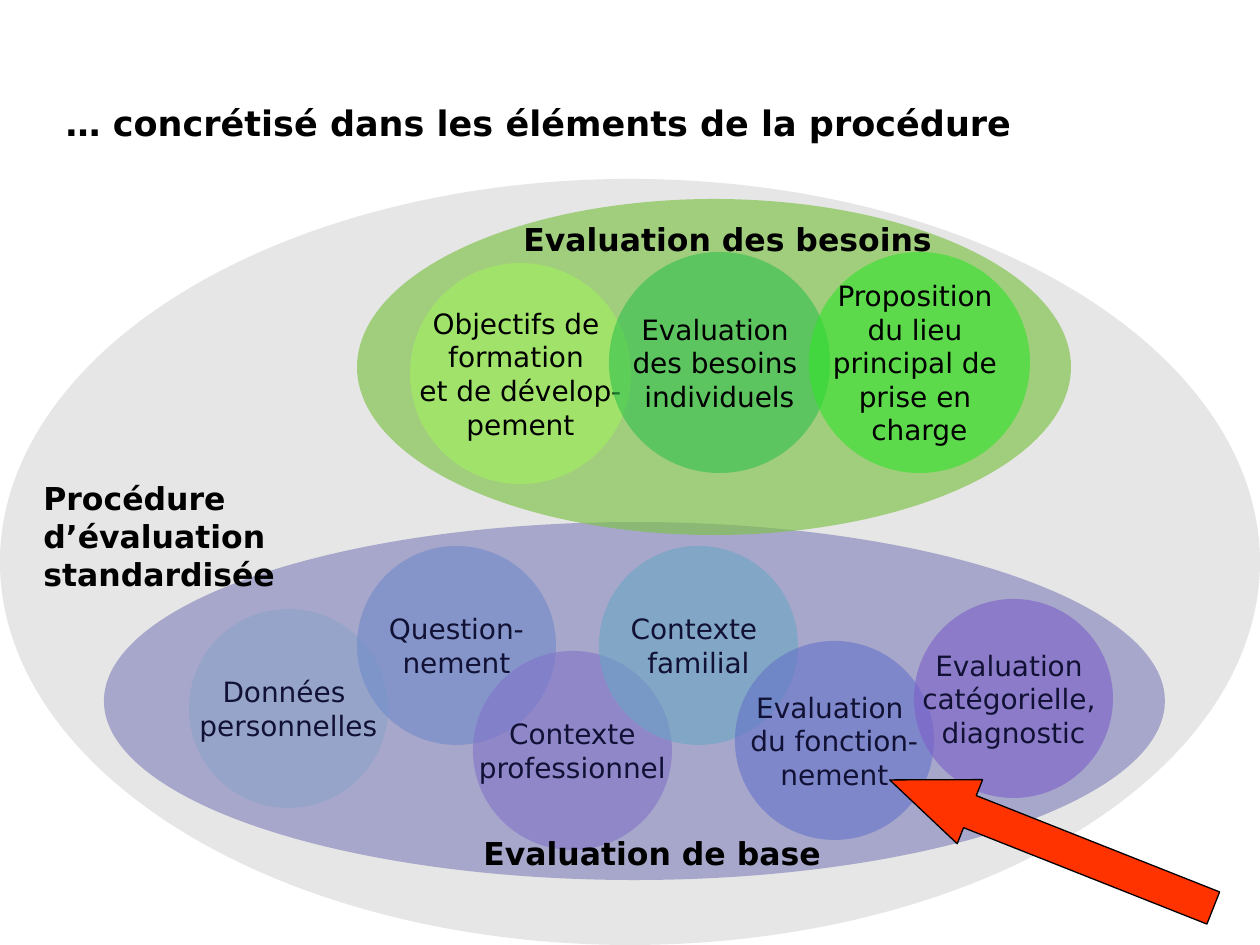
import pptx
import pptx.util
import pptx.dml.color
import pptx.enum.shapes
import pptx.enum.text
import pptx.oxml.ns
import lxml.etree

RGBColor = pptx.dml.color.RGBColor
MSO_SHAPE = pptx.enum.shapes.MSO_SHAPE
ANCHOR = pptx.enum.text.MSO_ANCHOR
ALIGN = pptx.enum.text.PP_ALIGN

PX = 914400 // 126
FONT = "DejaVu Sans"
BLACK = RGBColor(0x00, 0x00, 0x00)
GREY = RGBColor(0xE6, 0xE6, 0xE6)
NAVY = RGBColor(0x33, 0x33, 0x99)
GREEN = RGBColor(0x7E, 0xC2, 0x47)
RED = RGBColor(0xFF, 0x33, 0x00)
PALE_BLUE = RGBColor(0xBB, 0xE0, 0xE3)
SKY = RGBColor(0x8F, 0xBA, 0xE3)
LILAC = RGBColor(0xAB, 0x95, 0xE3)
TURQUOISE = RGBColor(0x87, 0xE3, 0xD9)
BLUE = RGBColor(0x7E, 0x95, 0xE3)
VIOLET = RGBColor(0xA3, 0x77, 0xE3)
LIME = RGBColor(0xA2, 0xF1, 0x5E)
EMERALD = RGBColor(0x30, 0xC0, 0x4B)
BRIGHT_GREEN = RGBColor(0x31, 0xE2, 0x2B)

prs = pptx.Presentation()
prs.slide_width = 1260 * PX
prs.slide_height = 945 * PX
s = prs.slides.add_slide(prs.slide_layouts[5])


def write(sp, text, size=18, bold=False, align=ALIGN.LEFT, anchor=ANCHOR.TOP, wrap=False):
    """Fill a shape with text; \\n starts a paragraph, \\v breaks a line."""
    tf = sp.text_frame
    tf.text = text
    tf.word_wrap = wrap
    tf.auto_size = pptx.enum.text.MSO_AUTO_SIZE.NONE
    tf.vertical_anchor = anchor
    for p in tf.paragraphs:
        p.alignment = align
        for r in p.runs:
            r.font.name = FONT
            r.font.size = pptx.util.Pt(size)
            r.font.bold = bold
            r.font.color.rgb = BLACK


def add_ellipse(x, y, w, h, color, opacity=100):
    sp = s.shapes.add_shape(MSO_SHAPE.OVAL, x * PX, y * PX, w * PX, h * PX)
    sp.shadow.inherit = False
    sp.line.fill.background()
    sp.fill.solid()
    sp.fill.fore_color.rgb = color
    if opacity < 100:
        clr = sp.fill._xPr.find(".//" + pptx.oxml.ns.qn("a:srgbClr"))
        lxml.etree.SubElement(clr, pptx.oxml.ns.qn("a:alpha"), val=str(opacity * 1000))
    return sp


# Whole procedure
add_ellipse(0, 179, 1260, 766, GREY)

title = s.shapes.title
title.left, title.top, title.width, title.height = 53 * PX, 95 * PX, 1165 * PX, 55 * PX
write(title, "… concrétisé dans les éléments de la procédure", size=20, bold=True,
      anchor=ANCHOR.MIDDLE, wrap=True)

base_circles = [
    (189, 609, PALE_BLUE, "Données \vpersonnelles"),
    (357, 546, SKY, "Question-\vnement"),
    (473, 651, LILAC, "Contexte\vprofessionnel"),
    (599, 546, TURQUOISE, "Contexte \vfamilial"),
    (735, 641, BLUE, "Evaluation \ndu fonction-\vnement"),
    (914, 599, VIOLET, "Evaluation \vcatégorielle, \ndiagnostic"),
]
needs_circles = [
    (410, 263, LIME, "Objectifs de \vformation \vet de dévelop-\vpement"),
    (609, 252, EMERALD, "Evaluation \vdes besoins \vindividuels"),
    (809, 252, BRIGHT_GREEN, "Proposition \vdu lieu \vprincipal de \vprise en \vcharge"),
]
base_area = (104, 522, 1061, 358, NAVY, 35)
needs_area = (357, 199, 714, 336, GREEN, 66)

# The base area lies over its circles, the needs area under its own
ellipses = [(x, y, 199, 199, color, 60, text) for x, y, color, text in base_circles]
ellipses += [(*base_area, ""), (*needs_area, "")]
ellipses += [(x, y, 221, 221, color, 60, text) for x, y, color, text in needs_circles]
for *geometry, text in ellipses:
    sp = add_ellipse(*geometry)
    if text:
        write(sp, text, size=16, align=ALIGN.CENTER, anchor=ANCHOR.MIDDLE)

headings = [
    (471, 828, 363, 50, "Evaluation de base"),
    (31, 473, 440, 126, "Procédure\vd’évaluation\vstandardisée"),
    (511, 214, 435, 50, "Evaluation des besoins"),
]
for x, y, w, h, text in headings:
    box = s.shapes.add_textbox(x * PX, y * PX, w * PX, h * PX)
    write(box, text, bold=True)

# Arrow to the assessment of functioning
arrow = s.shapes.add_shape(MSO_SHAPE.DOWN_ARROW, 1017 * PX, 670 * PX, 69 * PX, 348 * PX)
arrow.rotation = 111.6
arrow.adjustments[0] = 0.5
arrow.adjustments[1] = 1.25
arrow.shadow.inherit = False
arrow.fill.solid()
arrow.fill.fore_color.rgb = RED
arrow.line.color.rgb = BLACK
arrow.line.width = pptx.util.Pt(0.75)

prs.save("out.pptx")
